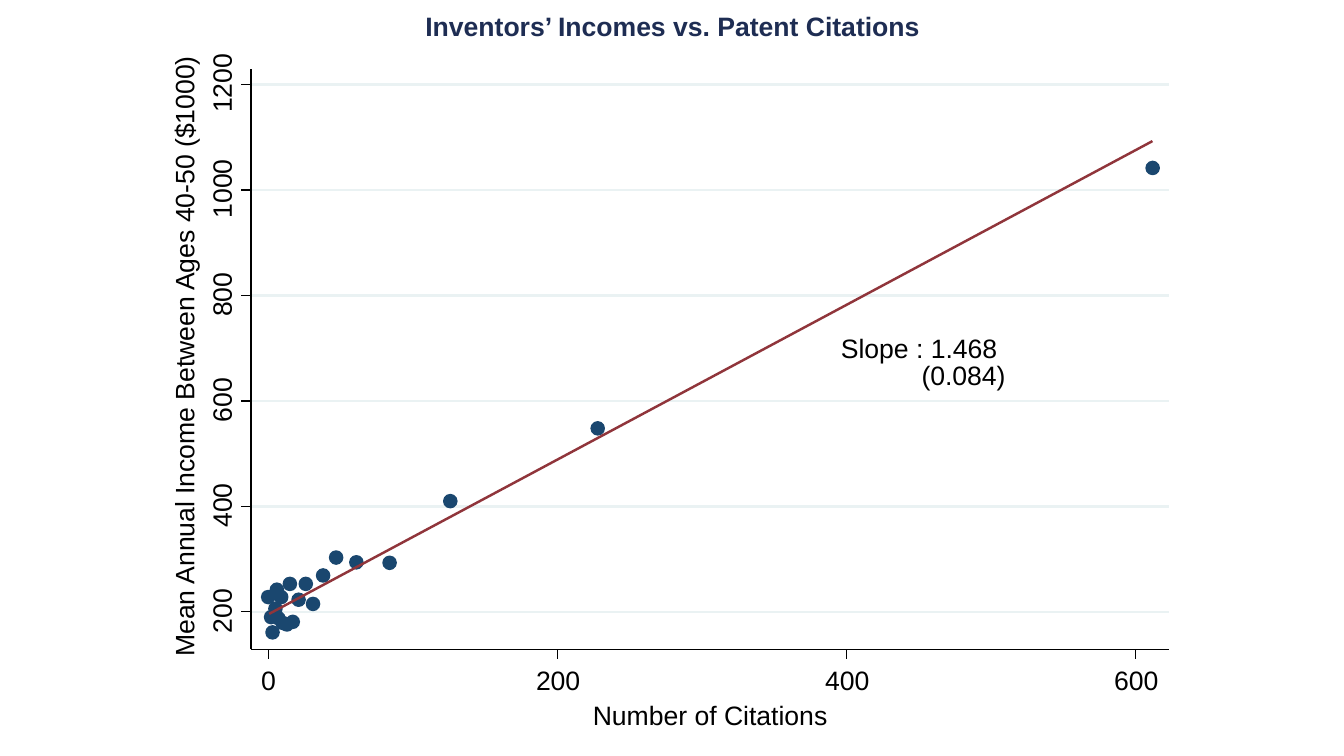
"""Build the slide relating inventors' incomes to patent citations."""
from dataclasses import dataclass

from lxml import etree
from pptx import Presentation
from pptx.dml.color import RGBColor
from pptx.enum.shapes import MSO_CONNECTOR, MSO_SHAPE
from pptx.enum.text import MSO_ANCHOR, PP_ALIGN
from pptx.oxml.ns import qn
from pptx.shapes.shapetree import SlideShapes
from pptx.text.text import TextFrame
from pptx.util import Inches, Pt

STRAIGHT = MSO_CONNECTOR.STRAIGHT
RECTANGLE, OVAL = MSO_SHAPE.RECTANGLE, MSO_SHAPE.OVAL
TOP, CENTER, LEFT = MSO_ANCHOR.TOP, PP_ALIGN.CENTER, PP_ALIGN.LEFT

BLACK = RGBColor(0x00, 0x00, 0x00)
WHITE = RGBColor(0xFF, 0xFF, 0xFF)
TITLE_BLUE = RGBColor(0x1E, 0x2D, 0x53)
POINT_BLUE = RGBColor(0x1A, 0x47, 0x6F)
FIT_RED = RGBColor(0x90, 0x35, 0x3B)
GRID = RGBColor(0xEA, 0xF2, 0xF3)
FONT, SIZE = "Arial", Pt(19)
THIN, THICK = 0.88, 1.75

PLOT_LEFT, PLOT_TOP, PLOT_RIGHT, PLOT_BOTTOM = 2.49, 0.68, 11.59, 6.44
TICK, DOT, LINE_HEIGHT, DIGIT = 0.1, 0.12, 0.35, 0.14
POINTS = [(0, 228), (2, 190), (3, 161), (5, 206), (6, 242), (7, 188), (9, 228),
          (10, 179), (13, 176), (15, 253), (17, 181), (21, 223), (26, 253),
          (31, 215), (38, 269), (47, 303), (61, 294), (84, 293), (126, 410),
          (228, 548), (612, 1042)]


@dataclass(frozen=True)
class Label:
    """One line of text, given by the box it has on the slide."""
    text: str
    left: float
    top: float
    width: float
    rotation: int = 0


@dataclass(frozen=True)
class Line:
    """One straight line between two places on the slide."""
    x1: float
    y1: float
    x2: float
    y2: float
    color: RGBColor = BLACK
    weight: float = THIN


NOTES = [Label("Slope : 1.468", 8.34, 3.29, 1.66),
         Label("(0.084)", 9.14, 3.56, 0.96)]
AXIS_TITLES = [
    Label("Mean Annual Income Between Ages 40-50 ($1000)",
          -1.18, 3.32, 6.04, 270),
    Label("Number of Citations", 5.88, 6.93, 2.44)]


def citation_x(citations: float) -> float:
    """Place a number of citations on the slide."""
    return 2.66 + citations * 8.6 / 600


def income_y(income: float) -> float:
    """Place an income in thousands on the slide."""
    return 6.07 - (income - 200) * 5.23 / 1000


def write(tf: TextFrame, text: str, color: RGBColor, align: PP_ALIGN,
          bold: bool = False) -> None:
    """Write one formatted run into a text frame without margins."""
    tf.margin_left = tf.margin_right = tf.margin_top = tf.margin_bottom = 0
    tf.vertical_anchor = TOP
    p = tf.paragraphs[0]
    p.alignment = align
    r = p.add_run()
    r.text = text
    r.font.name, r.font.size, r.font.bold = FONT, SIZE, bold
    r.font.color.rgb = color


def add_label(shapes: SlideShapes, label: Label) -> None:
    """Add a label on a single line."""
    box = shapes.add_textbox(Inches(label.left), Inches(label.top),
                             Inches(label.width), Inches(LINE_HEIGHT))
    box.rotation = label.rotation
    box.text_frame.word_wrap = False
    write(box.text_frame, label.text, BLACK, LEFT)


def add_line(shapes: SlideShapes, line: Line) -> None:
    """Add a straight line without a shadow."""
    connector = shapes.add_connector(STRAIGHT, Inches(line.x1), Inches(line.y1),
                                     Inches(line.x2), Inches(line.y2))
    connector.line.color.rgb = line.color
    connector.line.width = Pt(line.weight)
    etree.SubElement(connector._element.spPr, qn("a:effectLst"))


def add_filled(shapes: SlideShapes, kind: MSO_SHAPE, left: float, top: float,
               width: float, height: float, color: RGBColor,
               weight: float) -> None:
    """Add a preset shape with fill and outline of one colour."""
    shape = shapes.add_shape(kind, Inches(left), Inches(top),
                             Inches(width), Inches(height))
    shape.shadow.inherit = False
    shape.fill.solid()
    shape.fill.fore_color.rgb = shape.line.color.rgb = color
    shape.line.width = Pt(weight)


def add_income_tick(shapes: SlideShapes, income: int) -> None:
    """Add a tick and its upright label on the income axis."""
    y, half = income_y(income), DIGIT * len(str(income)) / 2
    width = 2 * half + 0.12
    add_line(shapes, Line(PLOT_LEFT, y, PLOT_LEFT - TICK, y))
    add_label(shapes, Label(str(income), 2.21 - width / 2,
                            y + half - (width + LINE_HEIGHT) / 2, width, 270))


def add_citation_tick(shapes: SlideShapes, citations: int) -> None:
    """Add a tick and its label on the citation axis."""
    x, half = citation_x(citations), DIGIT * len(str(citations)) / 2
    add_line(shapes, Line(x, PLOT_BOTTOM, x, PLOT_BOTTOM + TICK))
    add_label(shapes, Label(str(citations), x - half, 6.59, 2 * half + 0.12))


def main() -> None:
    """Assemble and save the slide."""
    prs = Presentation()
    prs.slide_width, prs.slide_height = Inches(13.33), Inches(7.5)
    s = prs.slides.add_slide(prs.slide_layouts[5])
    title = s.shapes.title
    title.left, title.top = Inches(1.67), Inches(0.1)
    title.width, title.height = Inches(10), Inches(0.32)
    title.text_frame.word_wrap = True
    write(title.text_frame, "Inventors’ Incomes vs. Patent Citations",
          TITLE_BLUE, CENTER, bold=True)

    add_filled(s.shapes, RECTANGLE, PLOT_LEFT, PLOT_TOP, PLOT_RIGHT - PLOT_LEFT,
               PLOT_BOTTOM - PLOT_TOP, WHITE, THIN)
    incomes = range(200, 1201, 200)
    for income in incomes:
        y = income_y(income)
        add_line(s.shapes, Line(PLOT_LEFT, y, PLOT_RIGHT, y, GRID, THICK))
    for citations, income in POINTS:
        add_filled(s.shapes, OVAL, citation_x(citations) - DOT / 2,
                   income_y(income) - DOT / 2, DOT, DOT, POINT_BLUE, THICK)
    add_line(s.shapes, Line(2.67, 6.09, 11.43, 1.4, FIT_RED, THICK))
    for note in NOTES:
        add_label(s.shapes, note)

    add_line(s.shapes, Line(PLOT_LEFT, PLOT_BOTTOM, PLOT_LEFT, PLOT_TOP))
    for income in incomes:
        add_income_tick(s.shapes, income)
    add_line(s.shapes, Line(PLOT_LEFT, PLOT_BOTTOM, PLOT_RIGHT, PLOT_BOTTOM))
    for citations in range(0, 601, 200):
        add_citation_tick(s.shapes, citations)
    for axis_title in AXIS_TITLES:
        add_label(s.shapes, axis_title)
    prs.save("out.pptx")


if __name__ == "__main__":
    main()
